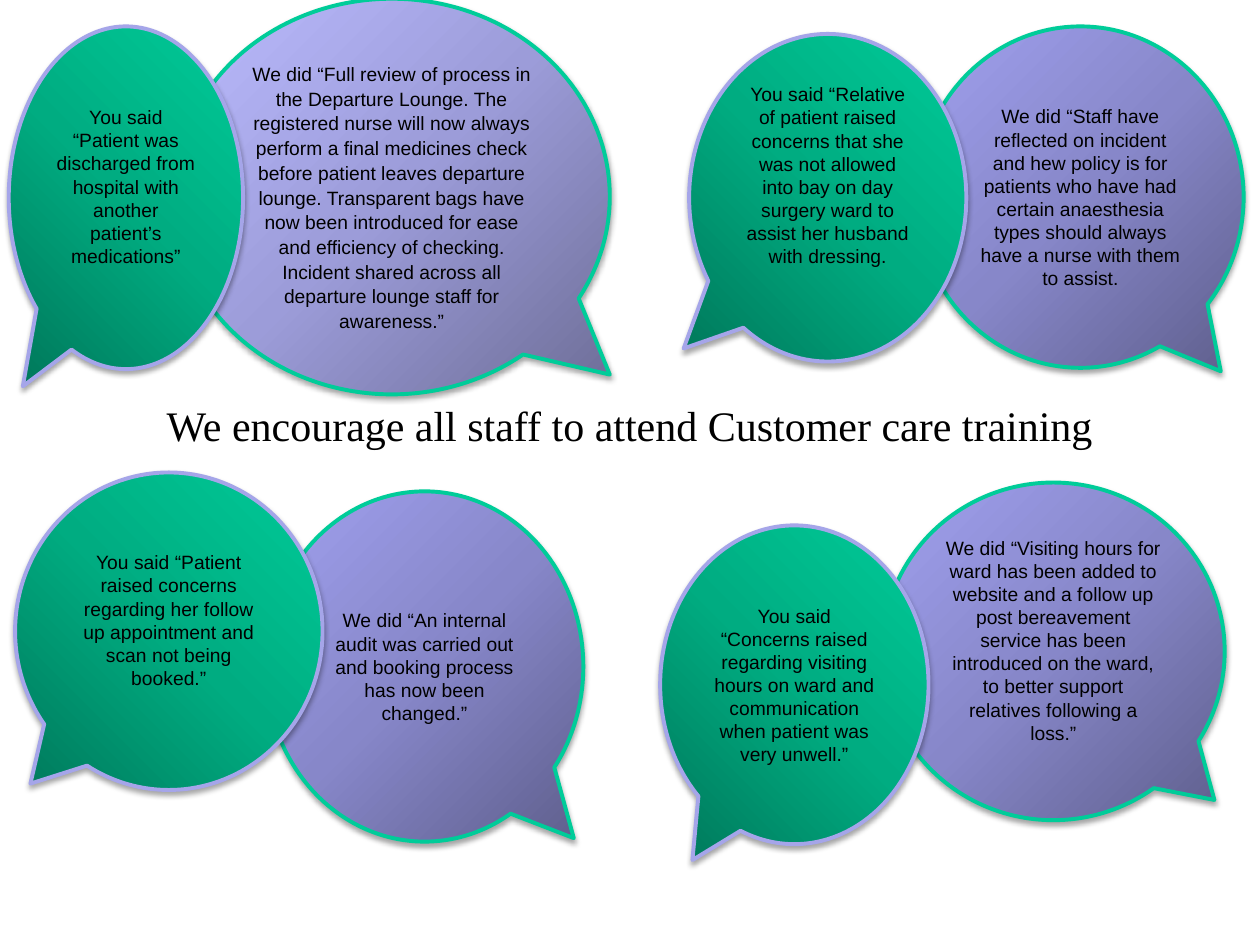
from dataclasses import dataclass

from pptx import Presentation
from pptx.dml.color import RGBColor
from pptx.enum.shapes import MSO_SHAPE
from pptx.enum.text import MSO_ANCHOR, PP_ALIGN
from pptx.oxml import parse_xml
from pptx.oxml.ns import nsdecls
from pptx.util import Inches, Pt


@dataclass(frozen=True)
class BubbleStyle:
    stops: tuple
    outline: str
    dark_corner: str


@dataclass(frozen=True)
class Theme:
    said: BubbleStyle = BubbleStyle(("00795B", "00AC81", "00CC99"), "A5A5E9", 't="100000" r="100000"')
    did: BubbleStyle = BubbleStyle(("5F5F8D", "8787C9", "A0A0EE"), "00CC99", 'l="100000" t="100000"')
    did_light: BubbleStyle = BubbleStyle(("6E6E98", "9C9CD9", "BBBBFF"), "00CC99", 'l="100000" t="100000"')
    text: str = "000000"
    bubble_font: str = "Arial"
    title_font: str = "Times New Roman"
    bubble_size: int = 11
    title_size: int = 24
    outline_width: float = 2.25


class SlideBuilder:
    def __init__(self, page, theme):
        self.page = page
        self.theme = theme

    def add_text(self, frame, text, font, size, line_spacing=None):
        frame.word_wrap = True
        para = frame.paragraphs[0]
        para.alignment = PP_ALIGN.CENTER
        if line_spacing:
            para.line_spacing = line_spacing
        span = para.add_run()
        span.text = text
        span.font.name = font
        span.font.size = Pt(size)
        span.font.color.rgb = RGBColor.from_string(self.theme.text)

    def title(self, text, left, top, width, height):
        box = self.page.shapes.add_textbox(*map(Inches, (left, top, width, height)))
        self.add_text(box.text_frame, text, self.theme.title_font, self.theme.title_size)

    def shade(self, shape, style):
        """Fill with a gradient that darkens towards the tail, and add a soft shadow."""
        shape.fill.background()
        stops = "".join(
            f'<a:gs pos="{place}"><a:srgbClr val="{color}"/></a:gs>'
            for place, color in zip((0, 50000, 100000), style.stops))
        gradient = parse_xml(
            f'<a:gradFill {nsdecls("a")} rotWithShape="1"><a:gsLst>{stops}</a:gsLst>'
            f'<a:path path="circle"><a:fillToRect {style.dark_corner}/></a:path></a:gradFill>')
        properties = shape.element.spPr
        properties.replace(properties.find("{*}noFill"), gradient)
        shape.shadow.inherit = False
        properties.find("{*}effectLst").append(parse_xml(
            f'<a:outerShdw {nsdecls("a")} blurRad="{Pt(3.1)}" dist="{Pt(1.8)}" dir="5400000" '
            'rotWithShape="0"><a:srgbClr val="000000"><a:alpha val="35000"/></a:srgbClr></a:outerShdw>'))

    def bubble(self, style, place, tail, text, lift=0, line_spacing=None):
        """Draw a speech bubble; lift is extra bottom margin that raises the text."""
        shape = self.page.shapes.add_shape(MSO_SHAPE.OVAL_CALLOUT, *map(Inches, place))
        for index, offset in enumerate(tail):
            shape.adjustments[index] = offset
        self.shade(shape, style)
        shape.line.color.rgb = RGBColor.from_string(style.outline)
        shape.line.width = Pt(self.theme.outline_width)
        frame = shape.text_frame
        frame.vertical_anchor = MSO_ANCHOR.MIDDLE
        frame.margin_bottom = Inches(0.05 + lift)
        self.add_text(frame, text, self.theme.bubble_font, self.theme.bubble_size, line_spacing)


def main():
    deck = Presentation()
    deck.slide_width, deck.slide_height = Inches(10), Inches(7.5)
    theme = Theme()
    builder = SlideBuilder(deck.slides.add_slide(deck.slide_layouts[6]), theme)
    line = 0.18

    builder.bubble(
        theme.did, (7, 3.83, 2.72, 2.68), (0.47, 0.44),
        "We did “Visiting hours for ward has been added to website and a follow up post "
        "bereavement service has been introduced on the ward, to better support relatives "
        "following a loss.”", lift=line)
    builder.title("We encourage all staff to attend Customer care training", 0.75, 3.12, 8.5, 0.5)
    builder.bubble(
        theme.did, (2.11, 3.9, 2.52, 2.78), (0.47, 0.49),
        "We did “An internal audit was carried out and booking process has now been changed.”")
    builder.bubble(
        theme.said, (0.12, 3.75, 2.44, 2.52), (-0.45, 0.48),
        "You said “Patient raised concerns regarding her follow up appointment and scan not "
        "being booked.”", lift=line)
    builder.bubble(
        theme.did_light, (1.38, -0.01, 3.46, 3.14), (0.5, 0.45),
        "We did “Full review of process in the Departure Lounge. The registered nurse will now "
        "always perform a final medicines check before patient leaves departure lounge. "
        "Transparent bags have now been introduced for ease and efficiency of checking. "
        "Incident shared across all departure lounge staff for awareness.”", line_spacing=1.07)
    builder.bubble(
        theme.did, (7.28, 0.21, 2.59, 2.71), (0.43, 0.51),
        "We did “Staff have reflected on incident and hew policy is for patients who have had "
        "certain anaesthesia types should always have a nurse with them to assist.")
    builder.bubble(
        theme.said, (5.24, 4.17, 2.13, 2.53), (-0.38, 0.55),
        "You said “Concerns raised regarding visiting hours on ward and communication when "
        "patient was very unwell.”")
    builder.bubble(
        theme.said, (5.47, 0.27, 2.2, 2.6), (-0.52, 0.46),
        "You said “Relative of patient raised concerns that she was not allowed into bay on day "
        "surgery ward to assist her husband with dressing.", lift=2 * line)
    builder.bubble(
        theme.said, (0.07, 0.21, 1.86, 2.72), (-0.44, 0.55),
        "You said “Patient was discharged from hospital with another patient’s medications”",
        lift=line)

    deck.save("out.pptx")


if __name__ == "__main__":
    main()
